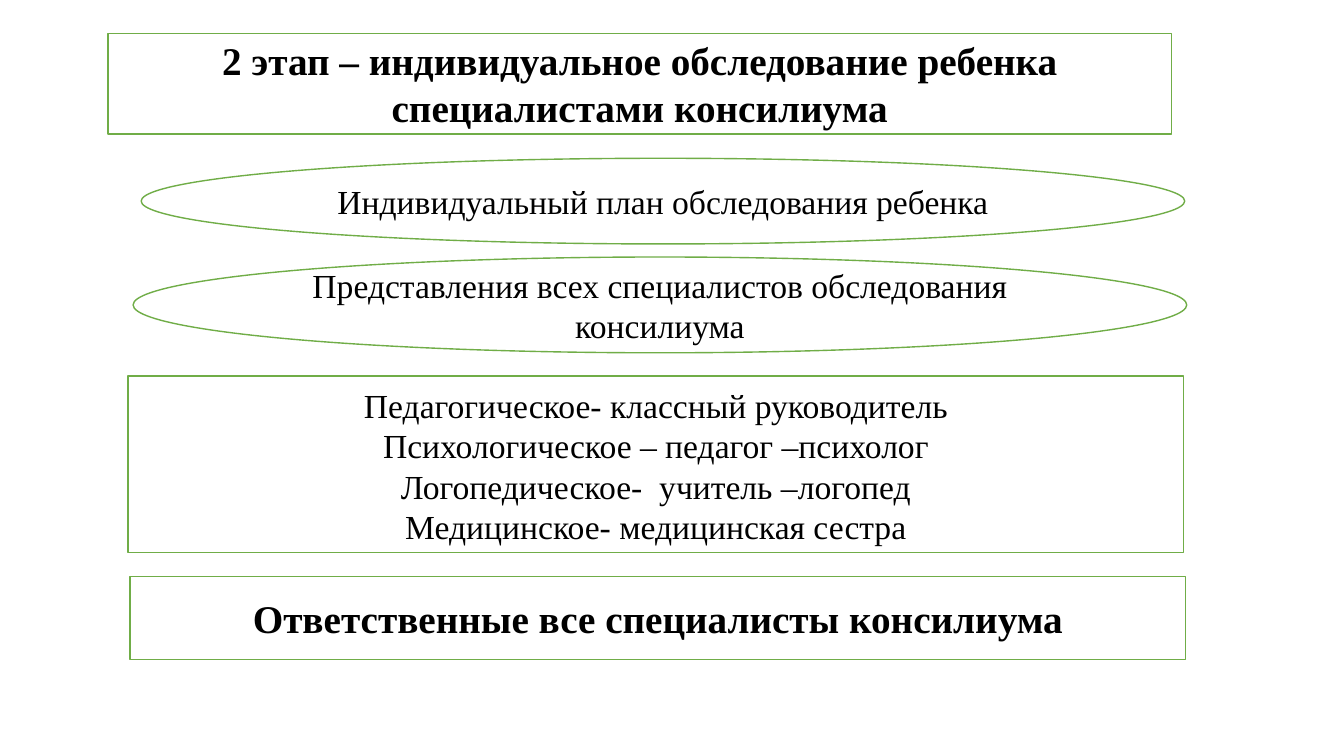
import pptx
import pptx.dml.color
import pptx.enum.shapes
import pptx.enum.text
import pptx.util
from pptx.util import Inches

GREEN = pptx.dml.color.RGBColor(0x70, 0xAD, 0x47)
WHITE = pptx.dml.color.RGBColor(0xFF, 0xFF, 0xFF)
BLACK = pptx.dml.color.RGBColor(0x00, 0x00, 0x00)
RECTANGLE = pptx.enum.shapes.MSO_SHAPE.RECTANGLE
OVAL = pptx.enum.shapes.MSO_SHAPE.OVAL
ANCHOR = pptx.enum.text.MSO_ANCHOR


def format_box(box, lines, size, bold):
    box.fill.solid()
    box.fill.fore_color.rgb = WHITE
    box.line.color.rgb = GREEN
    box.line.width = pptx.util.Pt(1)
    frame = box.text_frame
    frame.text = "\n".join(lines)
    frame.word_wrap = True
    frame.auto_size = pptx.enum.text.MSO_AUTO_SIZE.NONE
    frame.vertical_anchor = ANCHOR.MIDDLE
    for para in frame.paragraphs:
        para.alignment = pptx.enum.text.PP_ALIGN.CENTER
        for span in para.runs:
            span.font.name = "Times New Roman"
            span.font.size = pptx.util.Pt(size)
            span.font.bold = bold
            span.font.color.rgb = BLACK


deck = pptx.Presentation()
deck.slide_width = Inches(13.33)
deck.slide_height = Inches(7.5)
page = deck.slides.add_slide(deck.slide_layouts.get_by_name("Title Only"))

title = page.shapes.title
title.left, title.top = Inches(1.07), Inches(0.33)
title.width, title.height = Inches(10.55), Inches(1)
format_box(
    title,
    ["2 этап – индивидуальное обследование ребенка специалистами консилиума"],
    28,
    True,
)

specialists = [
    "Педагогическое- классный руководитель",
    "Психологическое – педагог –психолог",
    "Логопедическое-  учитель –логопед",
    "Медицинское- медицинская сестра",
]
boxes = [
    (OVAL, 1.4, 1.57, 10.35, 0.85, ["Индивидуальный план обследования ребенка"], 24, False),
    (OVAL, 1.32, 2.55, 10.45, 0.95,
     ["Представления всех специалистов обследования консилиума"], 24, False),
    (RECTANGLE, 1.27, 3.73, 10.47, 1.75, specialists, 24, False),
    (RECTANGLE, 1.29, 5.72, 10.47, 0.82, ["Ответственные все специалисты консилиума"], 28, True),
]
for kind, left, top, width, height, lines, size, bold in boxes:
    box = page.shapes.add_shape(kind, Inches(left), Inches(top), Inches(width), Inches(height))
    box.shadow.inherit = False
    format_box(box, lines, size, bold)
    if lines is specialists:
        box.text_frame.vertical_anchor = ANCHOR.BOTTOM
        box.text_frame.margin_bottom = Inches(0.06)

deck.save("out.pptx")
